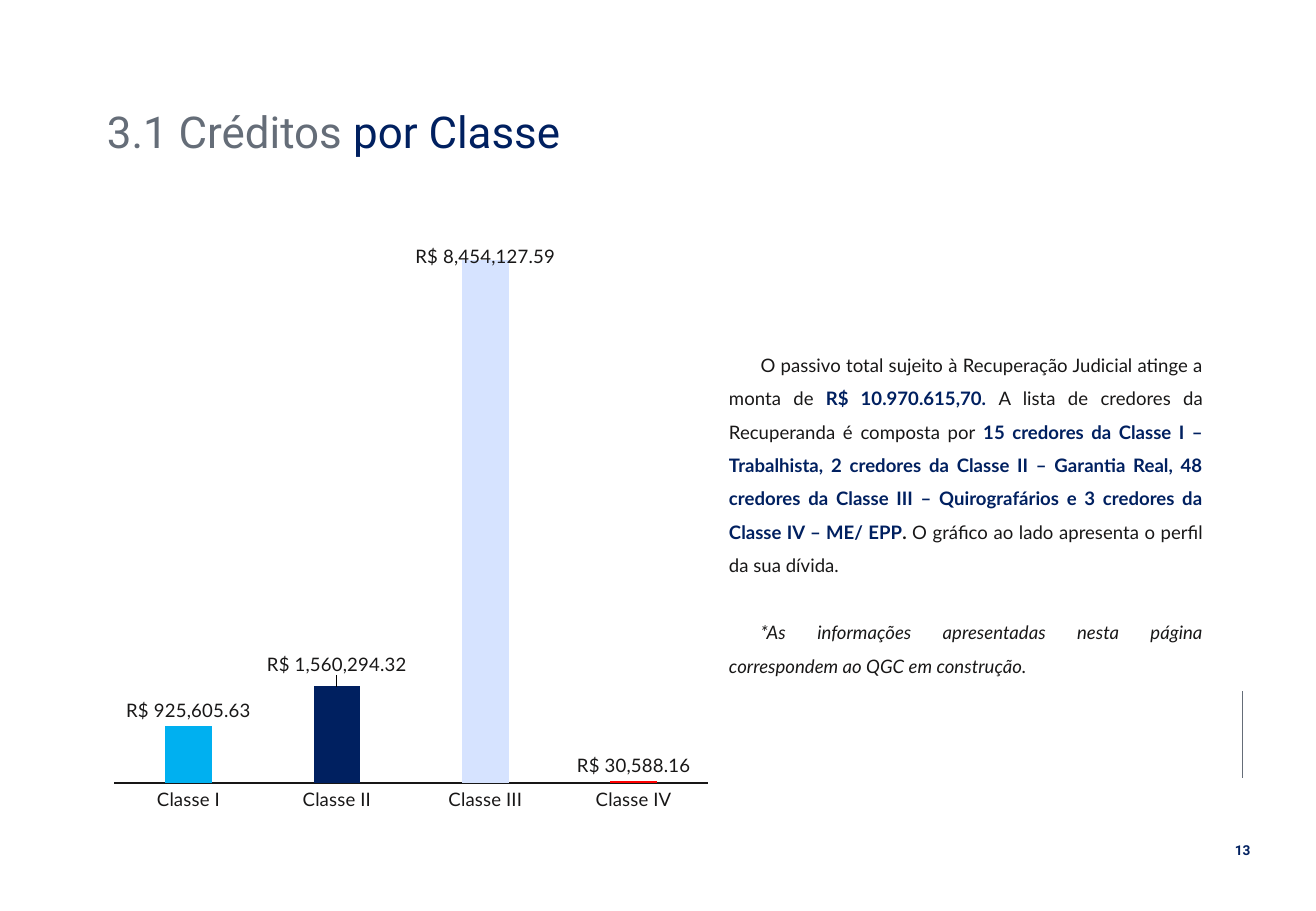
"""Build the slide on credits by class: a column chart beside a summary."""
from dataclasses import dataclass
from typing import Any, NamedTuple

from lxml import etree
from pptx import Presentation
from pptx.chart.data import CategoryChartData
from pptx.dml.color import RGBColor
from pptx.enum.chart import XL_CHART_TYPE, XL_LABEL_POSITION, XL_TICK_MARK
from pptx.enum.shapes import MSO_CONNECTOR
from pptx.enum.text import MSO_ANCHOR, PP_ALIGN
from pptx.oxml import parse_xml
from pptx.oxml.ns import nsdecls, qn
from pptx.util import Cm, Pt

COLUMN = XL_CHART_TYPE.COLUMN_CLUSTERED
OUTSIDE = XL_LABEL_POSITION.OUTSIDE_END
NO_TICK = XL_TICK_MARK.NONE
STRAIGHT = MSO_CONNECTOR.STRAIGHT
TOP = MSO_ANCHOR.TOP
LEFT, CENTER, JUSTIFY = PP_ALIGN.LEFT, PP_ALIGN.CENTER, PP_ALIGN.JUSTIFY
TITLE_ONLY = 5
MONEY = '"R$"\\ #,##0.00'


@dataclass(frozen=True)
class Theme:
    navy: str = "002060"
    grey: str = "656D78"
    ink: str = "181717"
    heading_font: str = "Roboto"
    body_font: str = "Lato"
    title_size: float = 26
    body_size: float = 11
    number_size: float = 8.1


class Area(NamedTuple):
    left: float
    top: float
    width: float
    height: float


class Span(NamedTuple):
    text: str
    color: str
    bold: bool = False
    italic: bool = False


class Credit(NamedTuple):
    name: str
    value: float
    color: str
    label_shift: float = 0


THEME = Theme()
TITLE_AREA = Area(1.98, 2.18, 20.78, 1.35)
SUMMARY_AREA = Area(14.99, 7.04, 10.41, 6.53)
CHART_AREA = Area(2.13, 4.47, 12.93, 12.8)
NUMBER_AREA = Area(25.55, 17.48, 0.86, 0.61)
PLOT_LAYOUT = {"x": 0.02, "y": 0.02, "w": 0.96, "h": 0.91}

TITLE = [Span("3.1 Créditos ", THEME.grey), Span("por Classe", THEME.navy)]
SUMMARY = [
    Span("O passivo total sujeito à Recuperação Judicial atinge a monta de", THEME.ink),
    Span(" R$ 10.970.615,70. ", THEME.navy, bold=True),
    Span("A lista de credores da Recuperanda é composta por ", THEME.ink),
    Span("15 credores da Classe I – Trabalhista, 2 credores da Classe II – "
         "Garantia Real, 48 credores da Classe III – Quirografários e "
         "3 credores da Classe IV – ME/ EPP", THEME.navy, bold=True),
    Span(". ", THEME.ink, bold=True),
    Span("O gráfico ao lado apresenta o perfil da sua dívida.", THEME.ink),
]
NOTE = [Span("*As informações apresentadas nesta página correspondem ao QGC "
             "em construção.", THEME.ink, italic=True)]
CREDITS = [
    Credit("Classe I", 925605.63, "00B0F0"),
    Credit("Classe II", 1560294.32, THEME.navy, -0.01),
    Credit("Classe III", 8454127.59, "D6E3FF", 0.02),
    Credit("Classe IV", 30588.16, "FF0000"),
]


def apply(target: Any, values: dict[str, Any]) -> None:
    for name, value in values.items():
        setattr(target, name, value)


def place(shape: Any, area: Area) -> None:
    apply(shape, {name: Cm(length) for name, length in area._asdict().items()})


def style_font(font: Any, family: str, size: float, color: str,
               bold: bool = False, italic: bool = False) -> None:
    apply(font, {"name": family, "size": Pt(size), "bold": bold, "italic": italic})
    font.color.rgb = RGBColor.from_string(color)


def write(para: Any, spans: list[Span], family: str, size: float,
          layout: dict[str, Any]) -> None:
    apply(para, layout)
    for span in spans:
        run = para.add_run()
        run.text = span.text
        style_font(run.font, family, size, span.color, span.bold, span.italic)


def add_title(page: Any) -> None:
    box = page.shapes.title
    place(box, TITLE_AREA)
    apply(box.text_frame, {"vertical_anchor": TOP, "word_wrap": True})
    write(box.text_frame.paragraphs[0], TITLE, THEME.heading_font, THEME.title_size,
          {"alignment": LEFT, "line_spacing": 0.9, "space_before": Pt(0)})


def add_summary(page: Any) -> None:
    frame = page.shapes.add_textbox(*map(Cm, SUMMARY_AREA)).text_frame
    frame.word_wrap = True
    layout = {"alignment": JUSTIFY, "line_spacing": 1.5}
    paras = [frame.paragraphs[0], frame.add_paragraph()]
    for para, spans in zip(paras, (SUMMARY, NOTE)):
        para._p.get_or_add_pPr().set("indent", str(Cm(0.66)))
        write(para, spans, THEME.body_font, THEME.body_size, layout)
    paras[1].space_before = Pt(19.8)


def manual_layout(values: dict[str, float], inner: bool = False) -> Any:
    target = '<c:layoutTarget val="inner"/>' if inner else ""
    modes = '<c:xMode val="edge"/><c:yMode val="edge"/>' if inner else ""
    sides = "".join(f'<c:{side} val="{value}"/>' for side, value in values.items())
    return parse_xml(f'<c:layout {nsdecls("c")}><c:manualLayout>{target}{modes}'
                     f"{sides}</c:manualLayout></c:layout>")


def shift_label(series: Any, index: int, shift: float) -> None:
    label = series.points[index].data_label
    style_font(label.font, THEME.body_font, THEME.body_size, THEME.ink)
    label.position = OUTSIDE
    mark = series._element.xpath(f"c:dLbls/c:dLbl/c:idx[@val='{index}']")[0]
    number = etree.Element(qn("c:numFmt"), formatCode=MONEY, sourceLinked="0")
    mark.addnext(number)
    mark.addnext(manual_layout({"x": 0, "y": shift}))


def add_credit_chart(page: Any) -> None:
    data = CategoryChartData(number_format=MONEY)
    data.categories = [credit.name for credit in CREDITS]
    data.add_series("Series 1", [credit.value for credit in CREDITS])
    chart = page.shapes.add_chart(COLUMN, *map(Cm, CHART_AREA), data).chart
    apply(chart, {"has_legend": False, "has_title": False})
    style_font(chart.font, THEME.body_font, THEME.body_size, THEME.ink)
    apply(chart.value_axis, {"visible": False, "has_major_gridlines": False,
                             "minimum_scale": 0, "maximum_scale": 9000000})
    axis = chart.category_axis
    apply(axis, {"major_tick_mark": NO_TICK, "minor_tick_mark": NO_TICK})
    style_font(axis.tick_labels.font, THEME.body_font, THEME.body_size, THEME.ink)
    axis.format.line.width = Pt(0.75)
    axis.format.line.color.rgb = RGBColor.from_string(THEME.ink)

    plot = chart.plots[0]
    apply(plot, {"gap_width": 219, "overlap": -27, "vary_by_categories": False})
    series = plot.series[0]
    apply(series.data_labels, {"show_value": True, "position": OUTSIDE,
                               "number_format": MONEY, "number_format_is_linked": False})
    style_font(series.data_labels.font, THEME.body_font, THEME.body_size, THEME.ink)
    for index, credit in enumerate(CREDITS):
        fill = series.points[index].format.fill
        fill.solid()
        fill.fore_color.rgb = RGBColor.from_string(credit.color)
        if credit.label_shift:
            shift_label(series, index, credit.label_shift)

    plot_area = chart._chartSpace.chart.plotArea
    for layout in plot_area.findall(qn("c:layout")):
        plot_area.remove(layout)
    plot_area.insert(0, manual_layout(PLOT_LAYOUT, inner=True))


def add_page_mark(page: Any) -> None:
    rule = page.shapes.add_connector(STRAIGHT, Cm(25.98), Cm(14.45), Cm(25.98), Cm(16.26))
    rule.line.width = Pt(0.5)
    rule.line.color.rgb = RGBColor.from_string(THEME.grey)
    etree.SubElement(rule._element.spPr, qn("a:effectLst"))
    frame = page.shapes.add_textbox(*map(Cm, NUMBER_AREA)).text_frame
    frame.word_wrap = False
    write(frame.paragraphs[0], [Span("13", THEME.navy, bold=True)],
          THEME.heading_font, THEME.number_size, {"alignment": CENTER})


def main() -> None:
    deck = Presentation()
    apply(deck, {"slide_width": Cm(27.51), "slide_height": Cm(19.05)})
    page = deck.slides.add_slide(deck.slide_layouts[TITLE_ONLY])
    for draw in (add_page_mark, add_title, add_summary, add_credit_chart):
        draw(page)
    deck.save("out.pptx")


if __name__ == "__main__":
    main()
